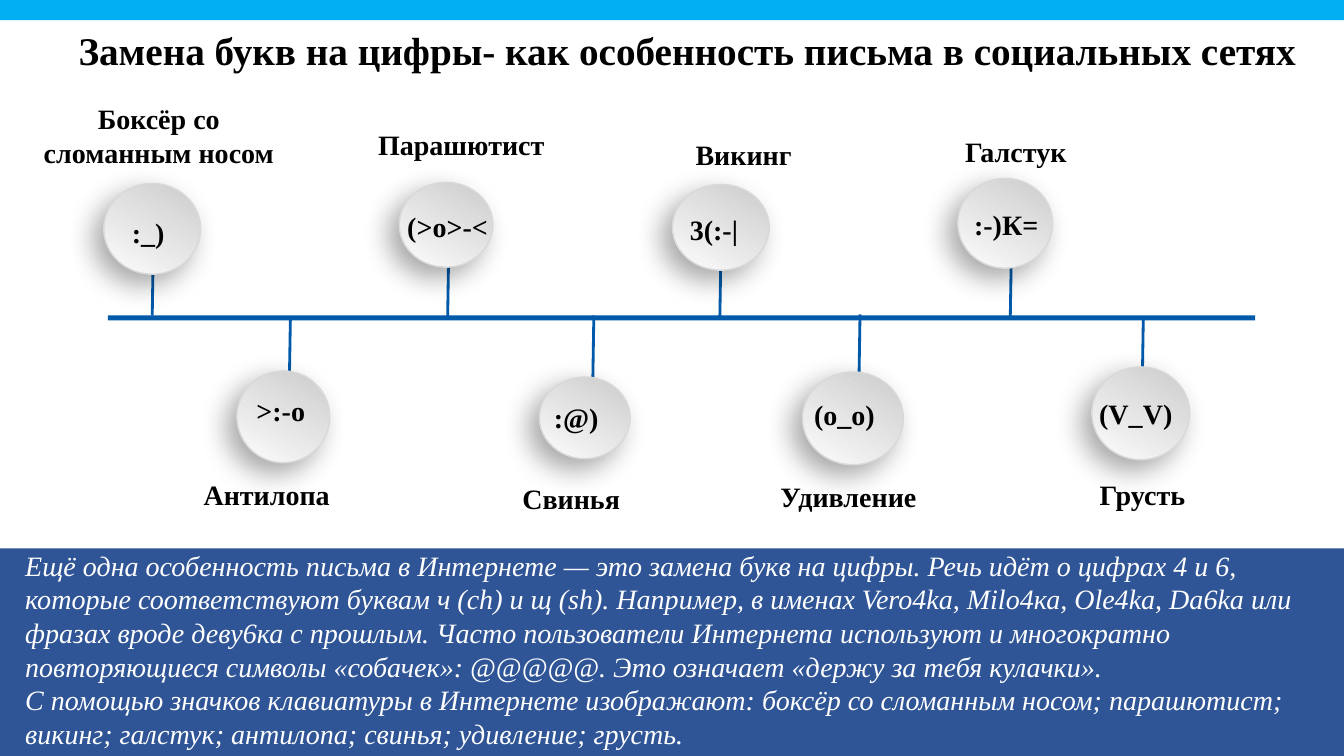
import dataclasses

import lxml.etree
import pptx
import pptx.dml.color
import pptx.enum.shapes
import pptx.enum.text
import pptx.oxml.ns
import pptx.util

Inches = pptx.util.Inches
SHAPES = pptx.enum.shapes.MSO_SHAPE
SLIDE_WIDTH, SLIDE_HEIGHT = 13.33, 7.5
FONT = "Times New Roman"
LINE_BLUE = "0059A9"
LINE_HEIGHT = 0.41
LABEL_WIDTH = 2.65
STEM_LENGTH = 0.62


@dataclasses.dataclass
class Smiley:
    """A circle's box, with face (x, y, width), label (x, y) and stem (x, y) measured from its corner."""
    label: str
    face: str
    circle: tuple
    face_at: tuple
    label_at: tuple
    stem_at: tuple


SMILEYS = [
    Smiley("Боксёр со сломанным носом", ":_) ", (1.03, 1.82, 0.96, 0.9),
           (0.18, 0.28, 0.59), (-0.78, -0.85), (0.48, 0.69)),
    Smiley("Антилопа", " >:-о ", (2.35, 3.68, 0.92, 0.91),
           (-0.09, 0.18, 1.05), (-1.03, 1.02), (0.52, -0.51)),
    Smiley("Парашютист", " (>о>-< ", (3.96, 1.81, 0.93, 0.84),
           (-0.1, 0.23, 1.16), (-0.71, -0.59), (0.48, 0.72)),
    Smiley("Свинья", " :@) ", (5.35, 3.74, 0.9, 0.81),
           (-0.23, 0.19, 1.19), (-1.01, 1.0), (0.53, -0.61)),
    Smiley("Викинг", "3(:-| ", (6.67, 1.83, 0.96, 0.85),
           (0.07, 0.24, 0.75), (-0.62, -0.51), (0.47, 0.69)),
    Smiley("Удивление", "(о_о) ", (7.96, 3.69, 1, 0.92),
           (-0.07, 0.21, 1.04), (-0.87, 1.03), (0.56, -0.57)),
    Smiley("Галстук", " :-)К= ", (9.5, 1.77, 0.94, 0.89),
           (0, 0.25, 0.89), (-0.75, -0.48), (0.52, 0.78)),
    Smiley("Грусть ", "(V_V) ", (10.83, 3.64, 0.97, 0.92),
           (-0.11, 0.25, 1.16), (-0.79, 1.06), (0.5, -0.5)),
]

EXPLANATION = [
    "Ещё одна особенность письма в Интернете — это замена букв на цифры. "
    "Речь идёт о цифрах 4 и 6, которые соответствуют буквам ч (ch) и щ (sh). "
    "Например, в именах Vero4ka, Milo4ка, Ole4ka, Da6ka или фразах вроде "
    "деву6ка с прошлым. Часто пользователи Интернета используют и многократно "
    "повторяющиеся символы «собачек»: @@@@@. Это означает «держу за тебя кулачки».",
    "С помощью значков клавиатуры в Интернете изображают: боксёр со сломанным "
    "носом; парашютист; викинг; галстук; антилопа; свинья; удивление; грусть.",
]


def color(value):
    """Turn a hex string into a colour."""
    return pptx.dml.color.RGBColor.from_string(value)


def add_text(slide, box, paragraphs, size=20, ink="000000", bold=False, italic=False, centered=True):
    """Add a wrapping text box holding the given paragraphs."""
    frame = slide.shapes.add_textbox(*map(Inches, box)).text_frame
    frame.word_wrap = True
    frame.margin_left = frame.margin_right = Inches(0.07)
    frame.margin_top = frame.margin_bottom = Inches(0.04)
    for index, text in enumerate(paragraphs):
        paragraph = frame.add_paragraph() if index else frame.paragraphs[0]
        if centered:
            paragraph.alignment = pptx.enum.text.PP_ALIGN.CENTER
        run = paragraph.add_run()
        run.text = text
        run.font.name = FONT
        run.font.size = pptx.util.Pt(size)
        run.font.bold = bold
        run.font.italic = italic
        run.font.color.rgb = color(ink)


def add_band(slide, box, fill):
    """Add a plain filled rectangle."""
    shape = slide.shapes.add_shape(SHAPES.RECTANGLE, *map(Inches, box))
    shape.shadow.inherit = False
    shape.fill.solid()
    shape.fill.fore_color.rgb = color(fill)
    shape.line.fill.background()


def add_stem(slide, left, top):
    """Add the line that ties a circle to the axis."""
    ends = map(Inches, (left + 0.01, top, left, top + STEM_LENGTH))
    stem = slide.shapes.add_connector(pptx.enum.shapes.MSO_CONNECTOR.STRAIGHT, *ends)
    stem.line.color.rgb = color(LINE_BLUE)
    stem.line.width = pptx.util.Pt(2)
    lxml.etree.SubElement(stem._element.spPr, pptx.oxml.ns.qn("a:effectLst"))


def add_circle(slide, box):
    """Add a grey gradient circle with a soft shadow to the lower left."""
    circle = slide.shapes.add_shape(SHAPES.OVAL, *map(Inches, box))
    circle.fill.gradient()
    circle.fill.gradient_angle = 240
    for stop, shade in zip(circle.fill.gradient_stops, ("CCCCCC", "FCFCFC")):
        stop.color.rgb = color(shade)
    circle.line.color.rgb = color("D9D9D9")
    circle.line.width = pptx.util.Pt(1)
    circle.shadow.inherit = False
    qn = pptx.oxml.ns.qn
    effects = circle._element.spPr.find(qn("a:effectLst"))
    shadow = lxml.etree.SubElement(
        effects, qn("a:outerShdw"), blurRad=str(pptx.util.Pt(20)),
        dist=str(pptx.util.Pt(10)), dir=str(136 * 60000), algn="ctr", rotWithShape="0")
    black = lxml.etree.SubElement(shadow, qn("a:srgbClr"), val="000000")
    lxml.etree.SubElement(black, qn("a:alpha"), val="34000")


def add_smiley(slide, smiley):
    """Place the stem, circle, face and label of one smiley."""
    left, top = smiley.circle[:2]
    stem_x, stem_y = smiley.stem_at
    face_x, face_y, face_width = smiley.face_at
    label_x, label_y = smiley.label_at
    add_stem(slide, left + stem_x, top + stem_y)
    add_circle(slide, smiley.circle)
    add_text(slide, (left + face_x, top + face_y, face_width, LINE_HEIGHT), [smiley.face], bold=True)
    add_text(slide, (left + label_x, top + label_y, LABEL_WIDTH, LINE_HEIGHT), [smiley.label], bold=True)


def add_header(slide, box):
    """Add the top stripe and the title below it."""
    left, top, width, height = box
    add_band(slide, (left, top, width, 0.2), "00B0F0")
    add_text(slide, (left + 0.58, top + 0.22, width - 0.86, height - 0.22),
             ["Замена букв на цифры- как особенность письма в социальных сетях"], size=28, bold=True)


def add_timeline(slide, axis):
    """Add the axis and every smiley along it."""
    add_band(slide, axis, LINE_BLUE)
    for smiley in SMILEYS:
        add_smiley(slide, smiley)


def add_explanation(slide, box):
    """Add the blue panel with the explanation."""
    left, top, width, height = box
    add_band(slide, box, "2F5597")
    add_text(slide, (left + 0.18, top - 0.04, width - 0.32, height + 0.04), EXPLANATION,
             ink="FFFFFF", italic=True, centered=False)


def main():
    """Build and save the slide."""
    presentation = pptx.Presentation()
    presentation.slide_width = Inches(SLIDE_WIDTH)
    presentation.slide_height = Inches(SLIDE_HEIGHT)
    slide = presentation.slides.add_slide(presentation.slide_layouts[6])
    add_timeline(slide, (1.07, 3.13, 11.38, 0.05))
    add_explanation(slide, (0, 5.44, SLIDE_WIDTH, SLIDE_HEIGHT - 5.44))
    add_header(slide, (0, 0, SLIDE_WIDTH, 0.77))
    presentation.save("out.pptx")


if __name__ == "__main__":
    main()
